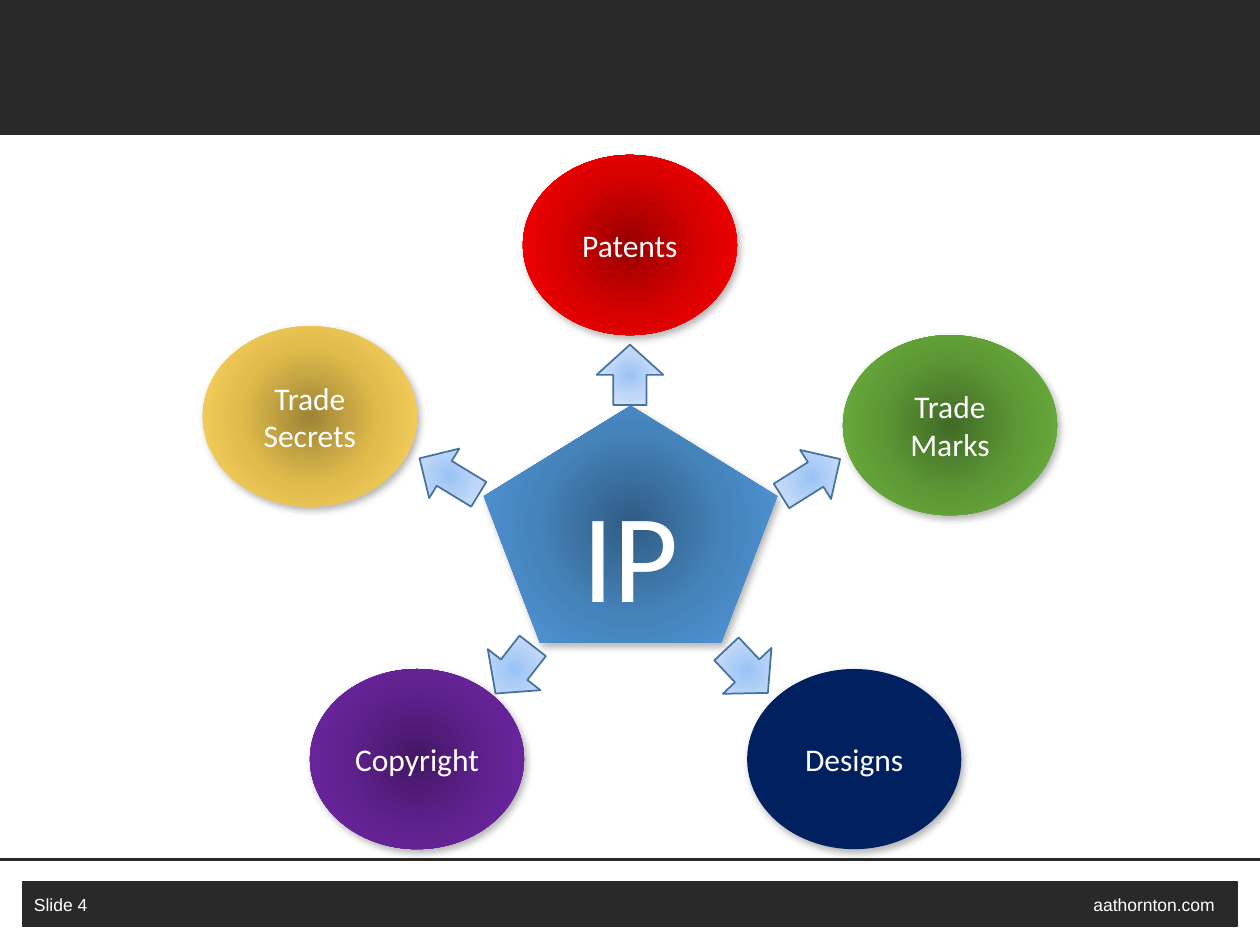
from collections import namedtuple

from pptx import Presentation
from pptx import util as u
from pptx.dml.color import RGBColor
from pptx.enum import shapes, text
from pptx.oxml import parse_xml
from pptx.oxml.ns import qn

NS = 'xmlns:a="http://schemas.openxmlformats.org/drawingml/2006/main"'
DARK = RGBColor(0x29, 0x29, 0x29)
WHITE = RGBColor(0xFF, 0xFF, 0xFF)
ARROW_LINE = RGBColor(0x43, 0x73, 0x9E)
BLUE = [RGBColor.from_string(c) for c in ("305C84", "4583BB", "529BDE")]
RED = [RGBColor.from_string(c) for c in ("970000", "D70000", "FF0000")]
GOLD = [RGBColor.from_string(c) for c in ("9E8436", "E1BC4C", "FFD966")]
GREEN = [RGBColor.from_string(c) for c in ("416B26", "5D9835", "6EB53F")]
PURPLE = [RGBColor.from_string(c) for c in ("431764", "5F218E", "7128A8")]
NAVY = [RGBColor(0x00, 0x20, 0x60)]
PALE = [RGBColor.from_string(c) for c in ("9AC3F5", "C2D8F8", "E1EBFB")]

Box = namedtuple("Box", "left top width height")

RIGHTS = [
    ("Patents", 2.54, 0, RED),
    ("Trade Secrets", 0, 1.36, GOLD),
    ("Trade Marks", 5.08, 1.43, GREEN),
    ("Copyright", 0.85, 4.08, PURPLE),
    ("Designs", 4.32, 4.08, NAVY),
]
ARROWS = [
    (3.15, 1.48, 0.48, 0.53, 270),
    (1.68, 2.32, 0.55, 0.46, 211.3),
    (4.55, 2.33, 0.55, 0.46, 327.8),
    (2.23, 3.82, 0.48, 0.53, 127.9),
    (4.08, 3.83, 0.48, 0.53, 46.7),
]


def add_shape(page, kind, box, colours):
    """Add an unlined shape with a solid or radial gradient fill."""
    shape = page.shapes.add_shape(kind, *(u.Inches(n) for n in box))
    shape.line.fill.background()
    shape.shadow.inherit = False
    if len(colours) == 1:
        shape.fill.solid()
        shape.fill.fore_color.rgb = colours[0]
        return shape
    stops = "".join(
        f'<a:gs pos="{50000 * i}"><a:srgbClr val="{colour}"/></a:gs>'
        for i, colour in enumerate(colours))
    gradient = parse_xml(
        f'<a:gradFill {NS} rotWithShape="1"><a:gsLst>{stops}</a:gsLst>'
        '<a:path path="circle"><a:fillToRect l="50000" t="50000" r="50000" b="50000"/>'
        '</a:path></a:gradFill>')
    shape._element.spPr.find(qn("a:prstGeom")).addnext(gradient)
    return shape


def add_text(frame, words, size, font, align):
    """Write one white run into the first paragraph of a text frame."""
    para = frame.paragraphs[0]
    para.alignment = align
    span = para.add_run()
    span.text = words
    span.font.size = u.Pt(size)
    span.font.name = font
    span.font.color.rgb = WHITE
    return para


def add_label_shape(page, kind, box, colours, words, size):
    """Add a shadowed shape with a centred label."""
    shape = add_shape(page, kind, box, colours)
    shape._element.spPr.find(qn("a:effectLst")).append(parse_xml(
        f'<a:outerShdw {NS} blurRad="{u.Pt(4.5)}" dist="{u.Pt(2.6)}" dir="{53 * 60000}" '
        'algn="ctr" rotWithShape="0"><a:srgbClr val="000000"><a:alpha val="30000"/>'
        '</a:srgbClr></a:outerShdw>'))
    shape.text_frame.word_wrap = True
    shape.text_frame.vertical_anchor = text.MSO_ANCHOR.MIDDLE
    add_text(shape.text_frame, words, size, "Calibri", text.PP_ALIGN.CENTER)


def add_band(page, box):
    """Add a dark bar with a thin outline."""
    band = add_shape(page, shapes.MSO_SHAPE.RECTANGLE, box, [DARK])
    band.line.color.rgb = DARK
    band.line.width = u.Pt(0.75)


def add_rule(page, left, top, width):
    """Add a horizontal dark line."""
    rule = page.shapes.add_connector(
        shapes.MSO_CONNECTOR.STRAIGHT, u.Inches(left), u.Inches(top),
        u.Inches(left + width), u.Inches(top))
    rule.line.color.rgb = DARK
    rule.line.width = u.Pt(1.5)
    rule._element.spPr.append(parse_xml(f"<a:effectLst {NS}/>"))


def add_header(page, box):
    """Place the header bar and the rule near its lower edge."""
    add_band(page, box)
    add_rule(page, box.left, box.top + 1.01, box.width)


def add_footer(page, box):
    """Place the footer rule, bar and its two captions."""
    add_rule(page, box.left, box.top, box.width)
    add_band(page, Box(box.left + 0.18, box.top + 0.18, box.width - 0.36, 0.35))
    captions = [("aathornton.com", 7.21, text.PP_ALIGN.RIGHT),
                ("Slide 4", 0.27, text.PP_ALIGN.LEFT)]
    for words, left, align in captions:
        caption = page.shapes.add_textbox(
            u.Inches(box.left + left), u.Inches(box.top + 0.27),
            u.Inches(2.43), u.Inches(0.16))
        frame = caption.text_frame
        frame.margin_left = frame.margin_right = frame.margin_top = frame.margin_bottom = 0
        frame.word_wrap = True
        frame.auto_size = text.MSO_AUTO_SIZE.SHAPE_TO_FIT_TEXT
        add_text(frame, words, 10, "Arial", align).line_spacing = 1.05


def add_diagram(page, box):
    """Place the central pentagon, the five rights and the arrows to them."""
    add_label_shape(page, shapes.MSO_SHAPE.REGULAR_PENTAGON,
                    Box(box.left + 2.23, box.top + 1.99, 2.33, 1.88), BLUE, "IP", 72)
    for words, left, top, colours in RIGHTS:
        add_label_shape(page, shapes.MSO_SHAPE.FLOWCHART_CONNECTOR,
                        Box(box.left + left, box.top + top, 1.7, 1.43), colours, words, 18)
    for left, top, width, height, angle in ARROWS:
        arrow = add_shape(page, shapes.MSO_SHAPE.RIGHT_ARROW,
                          Box(box.left + left, box.top + top, width, height), PALE)
        arrow.rotation = angle
        arrow.line.color.rgb = ARROW_LINE
        arrow.line.width = u.Pt(1)


def main():
    """Build and save the slide."""
    deck = Presentation()
    deck.slide_width, deck.slide_height = u.Inches(10), u.Inches(7.5)
    page = deck.slides.add_slide(deck.slide_layouts[6])
    add_header(page, Box(0, -0.03, 10, 1.1))
    add_footer(page, Box(0, 6.82, 10, 0.53))
    add_diagram(page, Box(1.61, 1.23, 6.78, 5.51))
    deck.save("out.pptx")


if __name__ == "__main__":
    main()
